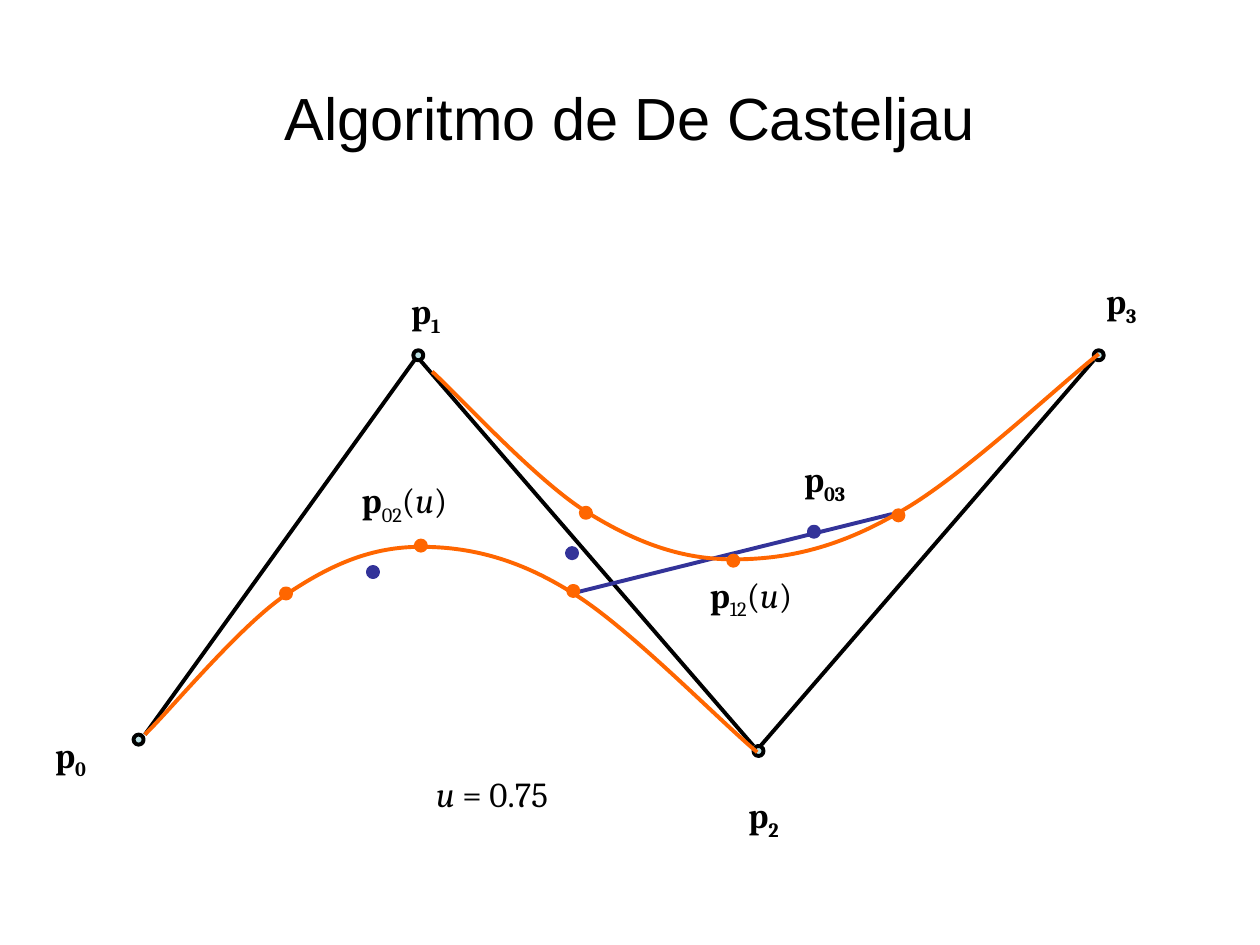
from dataclasses import dataclass
from itertools import pairwise

from pptx import Presentation
from pptx.dml.color import RGBColor as RGB
from pptx.enum.shapes import MSO_CONNECTOR as Connector, MSO_SHAPE as Shape
from pptx.enum.text import MSO_ANCHOR as Anchor, PP_ALIGN as Align
from pptx.oxml.ns import qn
from pptx.oxml.xmlchemy import OxmlElement
from pptx.util import Inches, Pt


@dataclass(frozen=True)
class Theme:
    ink: RGB = RGB(0x00, 0x00, 0x00)
    control: RGB = RGB(0xBB, 0xE0, 0xE3)
    curve: RGB = RGB(0xFF, 0x66, 0x00)
    chord: RGB = RGB(0x33, 0x33, 0x99)
    title_font: str = "Arial"
    label_font: str = "Cambria"
    title_size: Pt = Pt(34)
    label_size: Pt = Pt(20)
    stroke: Pt = Pt(2.25)


THEME = Theme()
DOT = 0.08
LABEL_HEIGHT = 0.43

CONTROL_POINTS = [(1.1, 5.87), (3.32, 2.82), (6.02, 5.96), (8.72, 2.82)]
POLYGON = [
    ((1.15, 5.83), (3.31, 2.83)),
    ((3.31, 2.83), (5.98, 5.92)),
    ((6.01, 5.95), (8.68, 2.86)),
]
CHORD = ((4.54, 4.71), (7.08, 4.08))

# Each curve is a start point followed by Bézier triples.
CURVE_02 = [
    (1.15, 5.83),
    (1.34, 5.65), (1.9, 4.97), (2.27, 4.72),
    (2.64, 4.47), (2.96, 4.34), (3.34, 4.34),
    (3.72, 4.34), (4.11, 4.43), (4.55, 4.71),
    (4.99, 4.98), (5.7, 5.71), (6.01, 5.97),
]
CURVE_12 = [
    (3.43, 2.95),
    (3.63, 3.13), (4.25, 3.81), (4.65, 4.06),
    (5.05, 4.31), (5.41, 4.44), (5.82, 4.44),
    (6.24, 4.44), (6.65, 4.35), (7.13, 4.07),
    (7.62, 3.8), (8.39, 3.07), (8.72, 2.81),
]
CURVE_POINTS = [(2.27, 4.71), (3.34, 4.33), (4.55, 4.69),
                (4.65, 4.07), (5.82, 4.45), (7.13, 4.09)]
CHORD_POINTS = [(2.96, 4.54), (4.54, 4.39), (6.46, 4.22)]

# Run styles: b bold, i italic, s subscript.
OF_U = [("(", ""), ("u", "i"), (")", "")]
LABELS = [
    (0.33, 5.77, 0.46, [("p", "b"), ("0", "bs")]),
    (3.15, 2.25, 0.46, [("p", "b"), ("1", "bs")]),
    (5.83, 6.25, 0.46, [("p", "b"), ("2", "bs")]),
    (8.67, 2.17, 0.46, [("p", "b"), ("3", "bs")]),
    (2.67, 3.75, 1.08, [("p", "b"), ("02", "s"), *OF_U]),
    (5.42, 4.5, 1.08, [("p", "b"), ("12", "s"), *OF_U]),
    (6.17, 3.58, 0.75, [("p", "b"), ("03", "bs")]),
    (3.33, 6.08, 1.15, [("u", "i"), (" = 0.75", "")]),
]


def set_stroke(shape, color):
    shape.line.color.rgb = color
    shape.line.width = THEME.stroke


def add_line(slide, start, end, color):
    ends = [Inches(value) for value in (*start, *end)]
    line = slide.shapes.add_connector(Connector.STRAIGHT, *ends)
    set_stroke(line, color)
    line._element.spPr.append(OxmlElement("a:effectLst"))


def add_dot(slide, center, fill, outline):
    left, top = (Inches(value - DOT / 2) for value in center)
    dot = slide.shapes.add_shape(Shape.OVAL, left, top, Inches(DOT), Inches(DOT))
    dot.shadow.inherit = False
    dot.fill.solid()
    dot.fill.fore_color.rgb = fill
    set_stroke(dot, outline)


def add_curve(slide, points, color):
    """Draw an outline through all points, then merge its segments into Béziers."""
    start, *rest = [(Inches(x), Inches(y)) for x, y in points]
    builder = slide.shapes.build_freeform(*start)
    builder.add_line_segments(rest, close=False)
    curve = builder.convert_to_shape()
    curve.shadow.inherit = False
    curve.fill.background()
    set_stroke(curve, color)

    segments = list(curve._element.iter(qn("a:lnTo")))
    for first in range(0, len(segments), 3):
        bezier = OxmlElement("a:cubicBezTo")
        segments[first].addprevious(bezier)
        for segment in segments[first:first + 3]:
            bezier.append(segment[0])
            segment.getparent().remove(segment)


def add_text(slide, box, runs, font, size):
    frame = slide.shapes.add_textbox(*[Inches(value) for value in box]).text_frame
    paragraph = frame.paragraphs[0]
    paragraph.alignment = Align.CENTER
    for text, style in runs:
        run = paragraph.add_run()
        run.text = text
        run.font.name = font
        run.font.size = size
        run.font.color.rgb = THEME.ink
        run.font.bold = "b" in style
        run.font.italic = "i" in style
        if "s" in style:
            run.font._element.set("baseline", "-25000")
    return frame


def add_title(slide, text):
    frame = add_text(slide, (0.5, 0.3, 9, 1.25), [(text, "")],
                     THEME.title_font, THEME.title_size)
    frame.word_wrap = True
    frame.vertical_anchor = Anchor.MIDDLE


def add_label(slide, left, top, width, runs):
    frame = add_text(slide, (left, top, width, LABEL_HEIGHT), runs,
                     THEME.label_font, THEME.label_size)
    frame.word_wrap = False


def main():
    deck = Presentation()
    deck.slide_width, deck.slide_height = Inches(10), Inches(7.5)
    slide = deck.slides.add_slide(deck.slide_layouts[6])

    add_title(slide, "Algoritmo de De Casteljau")
    for start, end in POLYGON:
        add_line(slide, start, end, THEME.ink)
    for center in CONTROL_POINTS:
        add_dot(slide, center, THEME.control, THEME.ink)
    add_line(slide, *CHORD, THEME.chord)
    for points in (CURVE_02, CURVE_12):
        add_curve(slide, points, THEME.curve)
    for center in CURVE_POINTS:
        add_dot(slide, center, THEME.curve, THEME.curve)
    for center in CHORD_POINTS:
        add_dot(slide, center, THEME.chord, THEME.chord)
    for label in LABELS:
        add_label(slide, *label)

    deck.save("out.pptx")


if __name__ == "__main__":
    main()
